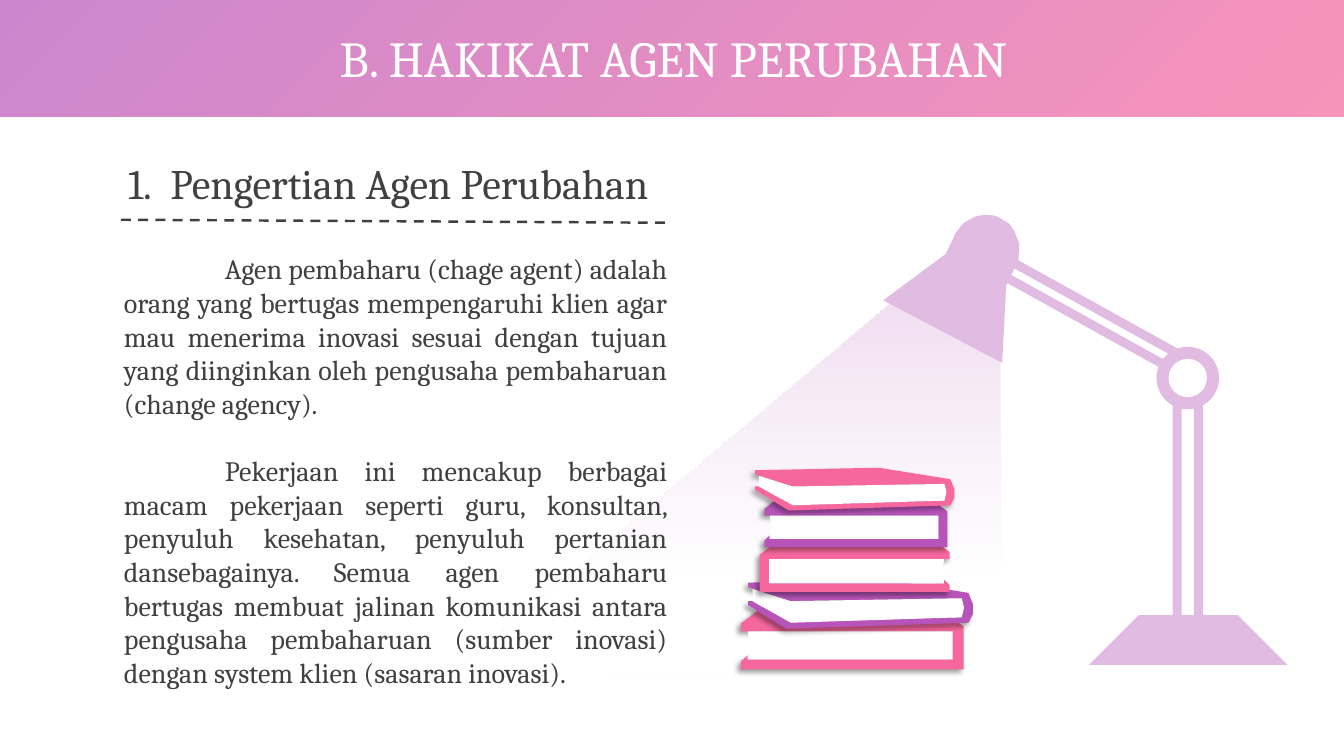
from lxml import etree
from pptx import Presentation, util as u
from pptx.dml.color import RGBColor
from pptx.enum import dml, shapes, text
from pptx.oxml import ns, parse_xml

WIDE, HIGH = 13.33, 7.5
WHITE = RGBColor(0xFF, 0xFF, 0xFF)
DARK = RGBColor(0x40, 0x40, 0x40)
LILAC = RGBColor(0xE2, 0xBB, 0xE3)
MIST = RGBColor(0xF1, 0xDD, 0xF1)
PINK = RGBColor(0xF5, 0x67, 0x9D)
PLUM = RGBColor(0xB7, 0x54, 0xBA)
BLACK = RGBColor(0, 0, 0)
KIND = shapes.MSO_SHAPE
ALIGN = text.PP_ALIGN
MID = text.MSO_ANCHOR.MIDDLE

FLAT = (
    [(.09, 0), (0, .25), (0, .38), (.95, .38), (.95, .84), (.03, .84),
     (.03, .77), (0, .87), (0, 1), (1, 1), (1, .3), (.89, 0)],
    [(.03, .38), (.95, .38), (.95, .84), (.03, .84), (.04, .6)])
TILT = (
    [(.02, .44), (0, .44), (0, .52), (.17, 1), (.98, .88), (1, .7),
     (1, .5), (.98, .27), (.62, 0), (0, .06), (0, .15), (.18, .44),
     (.95, .38), (.96, .57), (.95, .77), (.19, .88)],
    [(.02, .19), (.02, .44), (.19, .88), (.95, .77), (.96, .57),
     (.95, .38), (.19, .44)])
HEAD = [(9.93, 2.17), (9.87, 2.14), (9.77, 2.13), (9.67, 2.15), (9.56, 2.21),
        (9.48, 2.31), (9.38, 2.52), (8.76, 2.98), (9.94, 3.6), (9.98, 2.83),
        (10.1, 2.59), (10.11, 2.42), (10.06, 2.29), (10.01, 2.22)]
BEAM = [(9.91, 3.52), (9.93, 6.74), (4.43, 6.72), (8.95, 2.9)]
LAMP = (4.43, 2.13, 8.34, 4.61)


def paint(shape, color):
    shape.shadow.inherit = False
    shape.line.fill.background()
    shape.fill.solid()
    shape.fill.fore_color.rgb = color
    return shape


def tint(color, alpha):
    return f'<a:srgbClr val="{color}"><a:alpha val="{alpha * 1000}"/></a:srgbClr>'


def fade(shape, stops, angle):
    marks = "".join(f'<a:gs pos="{pos * 1000}">{tint(color, alpha)}</a:gs>'
                    for pos, color, alpha in stops)
    grad = parse_xml(f'<a:gradFill {ns.nsdecls("a")}><a:gsLst>{marks}</a:gsLst>'
                     f'<a:lin ang="{angle * 60000}" scaled="0"/></a:gradFill>')
    solid = shape.element.spPr.find(ns.qn("a:solidFill"))
    solid.getparent().replace(solid, grad)


def shade(shape, alpha, blur, dist):
    glow = shape.element.spPr.find(ns.qn("a:effectLst"))
    glow.append(parse_xml(
        f'<a:outerShdw {ns.nsdecls("a")} blurRad="{blur * 12700}" '
        f'dist="{dist * 12700}" dir="8100000" algn="tr" rotWithShape="0">'
        f'{tint(BLACK, alpha)}</a:outerShdw>'))


def block(slide, kind, box, color, turn=0):
    shape = slide.shapes.add_shape(kind, *map(u.Inches, box))
    shape.rotation = turn
    return paint(shape, color)


def poly(slide, points, color):
    spots = [(u.Inches(x), u.Inches(y)) for x, y in points]
    pen = slide.shapes.build_freeform(*spots[0])
    pen.add_line_segments(spots[1:], close=True)
    return paint(pen.convert_to_shape(), color)


def write(slide, box, words, size, color, align):
    frame = slide.shapes.add_textbox(*map(u.Inches, box)).text_frame
    frame.word_wrap = True
    frame.text = words
    for para in frame.paragraphs:
        para.alignment = align
        for run in para.runs:
            run.font.name = "Cambria"
            run.font.size = u.Pt(size)
            run.font.color.rgb = color
    return frame


def indent(para, first, left=0):
    props = para._p.get_or_add_pPr()
    props.set("marL", str(u.Inches(left)))
    props.set("indent", str(u.Inches(first)))


def header(slide, box):
    x, y, w, h = box
    band = block(slide, KIND.RECTANGLE, box, PINK)
    fade(band, [(0, PINK, 70), (100, PLUM, 70)], 225)
    frame = write(slide, (x + .35, y + .21, w - .67, h - .37),
                  "B. HAKIKAT AGEN PERUBAHAN", 36, WHITE, ALIGN.CENTER)
    frame.vertical_anchor = MID
    frame.paragraphs[0].line_spacing = .9


def lamp(slide, box):
    left, top = box[0] - LAMP[0], box[1] - LAMP[1]

    def shift(points):
        return [(x + left, y + top) for x, y in points]

    light = poly(slide, shift(BEAM), WHITE)
    fade(light, [(0, WHITE, 20), (27, WHITE, 80), (100, MIST, 100)], 270)
    for x, y, turn in [(10.78, 1.85, 299), (10.7, 1.99, 299),
                       (11.84, 3.75, 0), (11.63, 3.75, 0)]:
        block(slide, KIND.RECTANGLE, (x + left, y + top, .09, 2.37), LILAC, turn)
    for edge, color in [(.62, LILAC), (.38, WHITE)]:
        block(slide, KIND.OVAL, (11.78 + left - edge / 2, 3.75 + top - edge / 2,
                                 edge, edge), color)
    poly(slide, shift(HEAD), LILAC)
    block(slide, KIND.DIAGONAL_STRIPE, (11.09 + left, 5.9 + top, 1.39, 1.39),
          LILAC, 45)


def book(slide, box, form, color, flip=False):
    x, y, w, h = box
    cover, pages = [
        poly(slide, [(x + w * (1 - a if flip else a), y + h * b)
                     for a, b in points], hue)
        for points, hue in zip(form, (color, WHITE))]
    shade(cover, 40, 4, 3)


def stack(slide, box):
    x, y, w, h = box
    for left, top, wide, high, form, color, flip in [
            (0, .69, .96, .3, FLAT, PINK, False),
            (.03, .55, .97, .24, TILT, PLUM, False),
            (.08, .35, .82, .26, FLAT, PINK, True),
            (.1, .14, .79, .25, FLAT, PLUM, False),
            (.06, 0, .86, .21, TILT, PINK, False)]:
        book(slide, (x + w * left, y + h * top, w * wide, h * high),
             form, color, flip)


def body(slide, box):
    x, y, w, h = box
    rule = slide.shapes.add_connector(
        shapes.MSO_CONNECTOR.STRAIGHT,
        *map(u.Inches, (x + .23, y + .67, x + 5.68, y + .7)))
    rule.line.color.rgb = DARK
    rule.line.width = u.Pt(1.75)
    rule.line.dash_style = dml.MSO_LINE.DASH
    etree.SubElement(rule._element.spPr, ns.qn("a:effectLst"))

    frame = write(slide, (x + .14, y + .94, w - .14, h - .94),
                  "Agen pembaharu (chage agent) adalah orang yang bertugas "
                  "mempengaruhi klien agar mau menerima inovasi sesuai dengan "
                  "tujuan yang diinginkan oleh pengusaha pembaharuan "
                  "(change agency).\n"
                  "Pekerjaan ini mencakup berbagai macam pekerjaan seperti guru, "
                  "konsultan, penyuluh kesehatan, penyuluh pertanian "
                  "dansebagainya. Semua agen pembaharu bertugas membuat jalinan "
                  "komunikasi antara pengusaha pembaharuan (sumber inovasi) "
                  "dengan system klien (sasaran inovasi).",
                  20, DARK, ALIGN.JUSTIFY)
    frame.margin_left = frame.margin_right = u.Inches(.12)
    for para in frame.paragraphs:
        indent(para, 1)
    frame.paragraphs[1].space_before = u.Pt(24)

    frame = write(slide, (x, y, w - .11, .61), "1.\tPengertian Agen Perubahan",
                  30, DARK, ALIGN.LEFT)
    frame.vertical_anchor = MID
    frame.margin_left = u.Inches(.3)
    indent(frame.paragraphs[0], -.42, .42)


def main():
    deck = Presentation()
    deck.slide_width, deck.slide_height = u.Inches(WIDE), u.Inches(HIGH)
    slide = deck.slides.add_slide(deck.slide_layouts[6])
    header(slide, (0, 0, WIDE, 1.16))
    lamp(slide, LAMP)
    stack(slide, (7.35, 4.64, 2.3, 2.02))
    body(slide, (.97, 1.51, 5.77, 5.42))
    deck.save("out.pptx")


if __name__ == "__main__":
    main()
